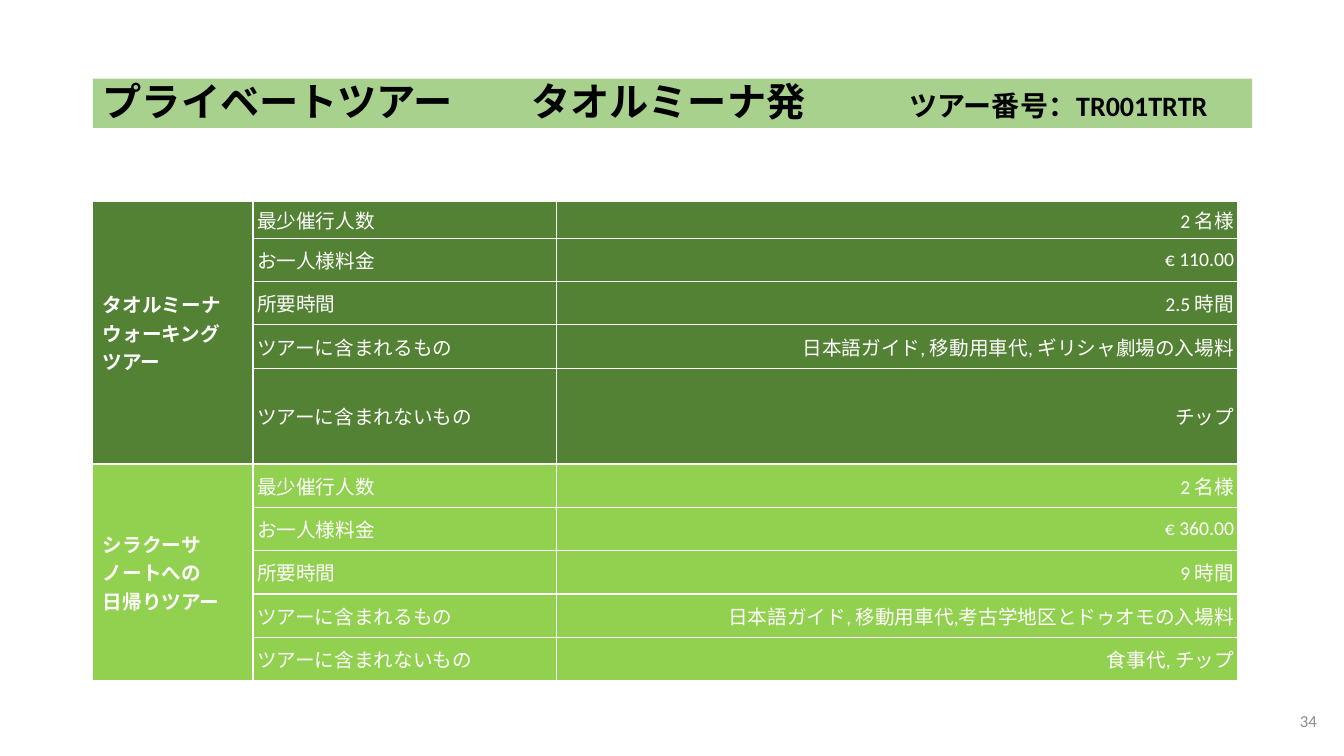
from lxml import etree
from pptx import Presentation
from pptx.dml.color import RGBColor
from pptx.enum.text import MSO_ANCHOR, MSO_AUTO_SIZE, PP_ALIGN
from pptx.oxml.ns import qn
from pptx.util import Inches, Pt

MIDDLE = MSO_ANCHOR.MIDDLE
NO_FIT = MSO_AUTO_SIZE.NONE
LEFT, RIGHT = PP_ALIGN.LEFT, PP_ALIGN.RIGHT

FONT = "Calibri"
COLORS = {
    "banner": "A9D18E",
    "walking": "548235",
    "day_trip": "92D050",
    "white": "FFFFFF",
    "black": "000000",
    "grey": "8C8C8C",
}
TITLE_ONLY = 5
COLUMN_WIDTHS = (1.59, 3.01, 6.76)
FIRST_ROW, ROW, TALL_ROW = 0.36, 0.43, 0.95
ROW_HEIGHTS = [FIRST_ROW] + [ROW] * 3 + [TALL_ROW] + [ROW] * 5
DETAIL_MARGIN = 0.04

LABELS = ("最少催行人数", "お一人様料金", "所要時間", "ツアーに含まれるもの", "ツアーに含まれないもの")
TOURS = (
    (
        "walking",
        ("タオルミーナウォーキング", "ツアー"),
        ("2 名様", "€ 110.00", "2.5 時間", "日本語ガイド, 移動用車代, ギリシャ劇場の入場料", "チップ"),
    ),
    (
        "day_trip",
        ("シラクーサ", "ノートへの", "日帰りツアー"),
        ("2 名様", "€ 360.00", "9 時間", "日本語ガイド, 移動用車代,考古学地区とドゥオモの入場料", "食事代, チップ"),
    ),
)


def rgb(name):
    return RGBColor.from_string(COLORS[name])


def add_run(paragraph, text, size, color, bold=False):
    run = paragraph.add_run()
    run.text = text
    run.font.name = FONT
    run.font.size = Pt(size)
    run.font.bold = bold
    run.font.color.rgb = rgb(color)


def add_tab_stops(paragraph, positions):
    stops = etree.SubElement(paragraph._p.get_or_add_pPr(), qn("a:tabLst"))
    for position in positions:
        etree.SubElement(stops, qn("a:tab"), pos=str(Inches(position)), algn="l")


def place(shape, left, top, width, height):
    shape.left, shape.top = Inches(left), Inches(top)
    shape.width, shape.height = Inches(width), Inches(height)


def build_banner(slide, left, top, width, height):
    banner = slide.shapes.title
    place(banner, left, top, width, height)
    banner.fill.solid()
    banner.fill.fore_color.rgb = rgb("banner")
    frame = banner.text_frame
    frame.auto_size = NO_FIT
    frame.vertical_anchor = MIDDLE
    heading = frame.paragraphs[0]
    heading.alignment = LEFT
    heading.line_spacing = 0.9
    add_tab_stops(heading, (4.25, 8))
    add_run(heading, "プライベートツアー\tタオルミーナ発\t", 28, "black", True)
    add_run(heading, "ツアー番号：TR001TRTR", 20, "black", True)


def style_cell(cell, color):
    cell.fill.solid()
    cell.fill.fore_color.rgb = rgb(color)
    cell.vertical_anchor = MIDDLE
    properties = cell._tc.get_or_add_tcPr()
    for index, side in enumerate(("lnL", "lnR", "lnT", "lnB")):
        border = etree.Element(qn(f"a:{side}"), w=str(Pt(1)))
        fill = etree.SubElement(border, qn("a:solidFill"))
        etree.SubElement(fill, qn("a:srgbClr"), val=COLORS["white"])
        properties.insert(index, border)


def write_cell(cell, lines, alignment=LEFT, bold=False):
    frame = cell.text_frame
    for index, line in enumerate(lines):
        paragraph = frame.add_paragraph() if index else frame.paragraphs[0]
        paragraph.alignment = alignment
        add_run(paragraph, line, 14, "white", bold)


def write_detail(cell, text, alignment):
    cell.margin_left = cell.margin_right = Inches(DETAIL_MARGIN)
    cell.margin_top = cell.margin_bottom = Inches(DETAIL_MARGIN)
    write_cell(cell, [text], alignment)


def build_tours(slide, left, top):
    tours = slide.shapes.add_table(
        len(ROW_HEIGHTS), len(COLUMN_WIDTHS), Inches(left), Inches(top),
        Inches(sum(COLUMN_WIDTHS)), Inches(sum(ROW_HEIGHTS)),
    ).table
    for column, width in zip(tours.columns, COLUMN_WIDTHS):
        column.width = Inches(width)
    for row, height in zip(tours.rows, ROW_HEIGHTS):
        row.height = Inches(height)
    for number, (color, name, values) in enumerate(TOURS):
        first = number * len(LABELS)
        last = first + len(LABELS) - 1
        for row, (label, value) in enumerate(zip(LABELS, values), first):
            for column in range(len(COLUMN_WIDTHS)):
                style_cell(tours.cell(row, column), color)
            write_detail(tours.cell(row, 1), label, LEFT)
            write_detail(tours.cell(row, 2), value, RIGHT)
        tour_name = tours.cell(first, 0)
        tour_name.merge(tours.cell(last, 0))
        write_cell(tour_name, name, bold=True)


def build_page_number(slide, left, top, width, height):
    page = slide.shapes.add_textbox(Inches(left), Inches(top), Inches(width), Inches(height))
    frame = page.text_frame
    frame.word_wrap = True
    frame.vertical_anchor = MIDDLE
    number = frame.paragraphs[0]
    number.alignment = RIGHT
    add_run(number, "34", 12, "grey")


def main():
    deck = Presentation()
    deck.slide_width, deck.slide_height = Inches(13.33), Inches(7.5)
    slide = deck.slides.add_slide(deck.slide_layouts[TITLE_ONLY])
    build_banner(slide, 0.92, 0.78, 11.5, 0.49)
    build_tours(slide, 0.92, 2)
    build_page_number(slide, 10.16, 6.95, 3, 0.4)
    deck.save("out.pptx")


if __name__ == "__main__":
    main()
